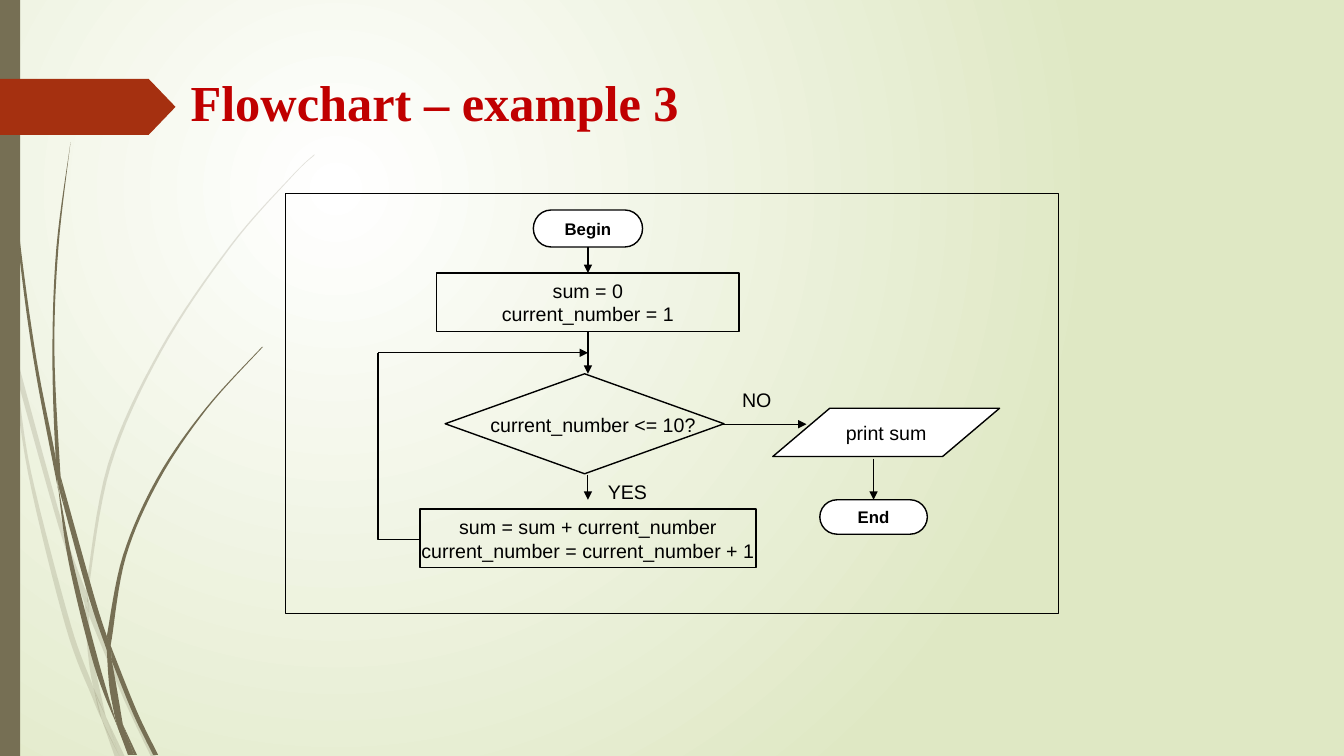
"""Builds the slide with the flowchart that sums the numbers from 1 to 10."""
import pptx
import pptx.dml.color
import pptx.enum.shapes
import pptx.enum.text
import pptx.oxml
import pptx.oxml.ns
import pptx.util

SHAPE = pptx.enum.shapes.MSO_SHAPE
CENTER = pptx.enum.text.PP_ALIGN.CENTER
GRID_PER_INCH = 12
COLUMNS, ROWS = 160, 90
SPLINE_STEPS = 8
BLACK, WHITE, OLIVE, RUST, RED = "000000", "FFFFFF", "766F54", "A53010", "C00000"

FAINT_GRASS = [
    ([(.11, 3.5), (.09, 3.22), (0, 2.82)], [(0, 2.99), (.1, 3.44)]),
    ([(.14, 3.45), (.62, 5.2), (.85, 5.86)], [(.84, 5.99), (.58, 5.22), (.17, 3.76)]),
    ([(.88, 5.96), (1.27, 6.92), (1.55, 7.51)], [(1.5, 7.51), (1.23, 6.94), (.88, 6.1)]),
    ([(1.05, 7.11), (1.24, 7.51)], [(1.19, 7.51), (1.05, 7.11)]),
    ([(.11, 3.5), (.17, 3.76), (.31, 4.69), (.7, 6.19), (.93, 6.83), (1.01, 7.14)],
     [(1.01, 7.14), (.92, 6.93), (.65, 6.21), (.28, 4.7), (.11, 3.5)]),
    ([(.84, 5.99), (.88, 6.1), (.91, 6.46), (1.05, 7.11)],
     [(1.05, 7.11), (.93, 6.83), (.87, 6.46), (.84, 5.99)]),
    ([(.85, 5.86), (1.07, 4.61), (1.58, 3.48), (2.28, 2.44), (2.89, 1.75), (3.12, 1.53)],
     [(3.12, 1.54), (2.9, 1.75), (2.29, 2.45), (1.6, 3.49), (1.1, 4.62), (.88, 5.84),
      (.88, 5.96)]),
    ([(1.01, 7.14), (1.19, 7.51)], [(1.14, 7.51), (1.01, 7.14)]),
    ([(.85, 5.86), (.88, 5.96), (.88, 6.1)], [(.88, 6.08), (.84, 5.99)]),
    ([(.93, 6.83), (1.05, 7.11), (1.19, 7.51)], [(1.19, 7.51), (1.01, 7.14), (.93, 6.83)]),
]
DARK_GRASS = [
    ([(.04, 0), (.08, 1.09), (.19, 2.32), (.36, 3.55), (.55, 4.53), (.57, 4.81)],
     [(.57, 4.81), (.56, 4.77), (.33, 3.55), (.17, 2.33), (.07, 1.1), (.03, 0)]),
    ([(.6, 4.72), (.93, 5.9), (1.06, 6.31)], [(1.06, 6.45), (.88, 5.92), (.64, 5.05)]),
    ([(1.1, 6.41), (1.36, 7.06), (1.57, 7.49)], [(1.52, 7.49), (1.32, 7.08), (1.11, 6.56)]),
    ([(.57, 4.77), (.72, 5.56), (.98, 6.57), (1.17, 7.22)],
     [(1.17, 7.22), (.93, 6.59), (.68, 5.57), (.57, 4.77)]),
    ([(.7, 1.41), (.56, 2.45), (.52, 3.49), (.55, 4.49), (.6, 4.72)],
     [(.6, 4.72), (.54, 3.49), (.58, 2.45), (.7, 1.41)]),
    ([(1.22, 7.19), (1.36, 7.49)], [(1.33, 7.49), (1.22, 7.19)]),
    ([(.55, 4.49), (.6, 4.72), (.64, 5.05)], [(.64, 5.05), (.57, 4.77), (.55, 4.49)]),
    ([(1.06, 6.31), (1.22, 5.51), (1.56, 4.74), (2.04, 4.05), (2.6, 3.44)],
     [(2.61, 3.44), (2.05, 4.06), (1.58, 4.76), (1.25, 5.52), (1.11, 6.33), (1.1, 6.41)]),
    ([(1.17, 7.22), (1.31, 7.49)], [(1.27, 7.49), (1.17, 7.22)]),
    ([(1.06, 6.45), (1.11, 6.56), (1.22, 7.19)], [(1.22, 7.19), (1.1, 6.91), (1.06, 6.45)]),
    ([(1.06, 6.31), (1.1, 6.41), (1.11, 6.56)], [(1.11, 6.56), (1.06, 6.45)]),
    ([(1.1, 6.91), (1.22, 7.19), (1.33, 7.49)], [(1.3, 7.49), (1.17, 7.22), (1.1, 6.91)]),
]


def grid(*counts):
    """Turns counts of grid cells into lengths."""
    return [pptx.util.Inches(count / GRID_PER_INCH) for count in counts]


def color(value):
    """Turns a hex string into a colour."""
    return pptx.dml.color.RGBColor.from_string(value)


def add_xml(parent, tag, **attributes):
    """Appends a drawing element to its parent."""
    child = parent.makeelement(pptx.oxml.ns.qn(tag), attributes)
    parent.append(child)
    return child


def paint(shape, fill=None, line=None, weight=1):
    """Sets fill and outline and drops the shadow."""
    shape.shadow.inherit = False
    if fill:
        shape.fill.solid()
        shape.fill.fore_color.rgb = color(fill)
    else:
        shape.fill.background()
    if line:
        shape.line.color.rgb = color(line)
        shape.line.width = pptx.util.Pt(weight)
    else:
        shape.line.fill.background()


def write(shape, text, size, bold=False, font="Arial", ink=BLACK, align=CENTER):
    """Puts formatted text into a shape."""
    shape.text_frame.text = text
    for paragraph in shape.text_frame.paragraphs:
        paragraph.alignment = align
        for run in paragraph.runs:
            run.font.size = pptx.util.Pt(size)
            run.font.name = font
            run.font.bold = bold
            run.font.color.rgb = color(ink)


def add_step(slide, kind, cells, text="", fill=None, weight=1, size=14, bold=False):
    """Adds one outlined flowchart symbol."""
    step = slide.shapes.add_shape(kind, *grid(*cells))
    paint(step, fill, BLACK, weight)
    step.text_frame.word_wrap = False
    step.text_frame.vertical_anchor = pptx.enum.text.MSO_ANCHOR.MIDDLE
    if text:
        write(step, text, size, bold)
    return step


def add_label(slide, cells, text):
    """Adds a centred label without outline."""
    label = slide.shapes.add_textbox(*grid(*cells))
    label.text_frame.word_wrap = False
    write(label, text, 14)


def add_arrow(slide, start, end, weight=0.75, source=None, target=None):
    """Adds an arrow, joined to the bottom of source and the top of target."""
    arrow = slide.shapes.add_connector(
        pptx.enum.shapes.MSO_CONNECTOR.STRAIGHT, *grid(*start, *end))
    if source is not None:
        arrow.begin_connect(source, 2)
    if target is not None:
        arrow.end_connect(target, 0)
    arrow.line.color.rgb = color(BLACK)
    arrow.line.width = pptx.util.Pt(weight)
    add_xml(arrow.line._get_or_add_ln(), "a:tailEnd", type="triangle")
    add_xml(arrow.element.spPr, "a:effectLst")


def add_outline(slide, points, close):
    """Adds a freeform through points given in inches."""
    corners = [(pptx.util.Inches(x), pptx.util.Inches(y)) for x, y in points]
    builder = slide.shapes.build_freeform(*corners[0])
    builder.add_line_segments(corners[1:], close=close)
    return builder.convert_to_shape()


def smooth_edge(points):
    """Returns points along a Catmull-Rom spline."""
    padded = [points[0], *points, points[-1]]
    curve = [points[0]]
    for before, start, end, after in zip(padded, padded[1:], padded[2:], padded[3:]):
        for step in range(1, SPLINE_STEPS + 1):
            t = step / SPLINE_STEPS
            curve.append(tuple(
                (2 * b + (c - a) * t + (2 * a - 5 * b + 4 * c - d) * t ** 2
                 + (3 * b - a - 3 * c + d) * t ** 3) / 2
                for a, b, c, d in zip(before, start, end, after)))
    return curve


def add_grass(slide, blades, opacity):
    """Adds blades of grass, each between two curved edges."""
    for edge, return_edge in blades:
        blade = add_outline(slide, smooth_edge(edge) + smooth_edge(return_edge), True)
        paint(blade, OLIVE)
        if opacity < 100:
            tint = blade.element.spPr.find(".//" + pptx.oxml.ns.qn("a:srgbClr"))
            add_xml(tint, "a:alpha", val=str(opacity * 1000))


def add_backdrop(slide):
    """Sets the round gradient and adds grass, side bar and title marker."""
    fill = slide.background.fill
    fill.gradient()
    for stop, shade in zip(fill.gradient_stops, (WHITE, "DFE8C4")):
        stop.color.rgb = color(shade)
    gradient = slide.element.find(".//" + pptx.oxml.ns.qn("a:gradFill"))
    gradient.remove(gradient.find(pptx.oxml.ns.qn("a:lin")))
    circle = add_xml(gradient, "a:path", path="circle")
    add_xml(circle, "a:fillToRect", l="50000", t="50000", r="100000", b="100000")
    add_grass(slide, FAINT_GRASS, 20)
    add_grass(slide, DARK_GRASS, 100)
    side_bar = slide.shapes.add_shape(SHAPE.RECTANGLE, *grid(0, 0, 2.4, ROWS))
    paint(side_bar, OLIVE)
    marker = slide.shapes.add_shape(SHAPE.PENTAGON, *grid(0, 9.4, 20.9, 6.65))
    marker.adjustments[0] = 0.48
    paint(marker, RUST)


def add_flowchart(slide):
    """Adds the symbols, labels and arrows of the flowchart."""
    add_step(slide, SHAPE.RECTANGLE, (34, 23, 92, 50), weight=0.75)
    begin = add_step(slide, SHAPE.FLOWCHART_TERMINATOR, (63.5, 25, 13, 4.4), "Begin",
                     WHITE, size=12, bold=True)
    setup = add_step(slide, SHAPE.RECTANGLE, (52, 32.5, 36, 7),
                     "sum = 0\ncurrent_number = 1")
    add_step(slide, SHAPE.DIAMOND, (53, 44.5, 33.2, 11.9))
    add_step(slide, SHAPE.RECTANGLE, (50, 60.6, 40, 7),
             "sum = sum + current_number\ncurrent_number = current_number + 1")
    output = add_step(slide, SHAPE.PARALLELOGRAM, (92, 48.6, 27, 5.75), "print sum", WHITE)
    output.adjustments[0] = 1.18
    end = add_step(slide, SHAPE.FLOWCHART_TERMINATOR, (97.6, 59.5, 12.8, 4.1), "End",
                   WHITE, size=12, bold=True)
    add_label(slide, (57, 48.6, 27.2, 4.2), "current_number <= 10?")
    add_label(slide, (87, 45.6, 6.2, 4.2), "NO")
    add_label(slide, (71, 56.6, 7.4, 4.2), "YES")
    loop_back = add_outline(slide, [(4.17, 5.35), (3.75, 5.35), (3.75, 3.5)], False)
    paint(loop_back, line=BLACK)
    add_arrow(slide, (70, 29.4), (70, 32.5), 1, source=begin, target=setup)
    add_arrow(slide, (70, 39.5), (70, 44.5), 1, source=setup)
    add_arrow(slide, (70, 56.5), (70, 59.5))
    add_arrow(slide, (45, 42), (70, 42))
    add_arrow(slide, (86, 50.5), (96, 50.5))
    add_arrow(slide, (104, 54.6), (104, 59.5), target=end)


def main():
    """Builds and saves the slide."""
    deck = pptx.Presentation()
    deck.slide_width, deck.slide_height = grid(COLUMNS, ROWS)
    slide = deck.slides.add_slide(deck.slide_layouts[6])
    add_backdrop(slide)
    title = slide.shapes.add_textbox(*grid(21.5, 7.9, 117, 16.8))
    title.text_frame.word_wrap = True
    write(title, "Flowchart – example 3", 36, True, "Times New Roman", RED,
          pptx.enum.text.PP_ALIGN.LEFT)
    add_flowchart(slide)
    deck.save("out.pptx")


if __name__ == "__main__":
    main()
